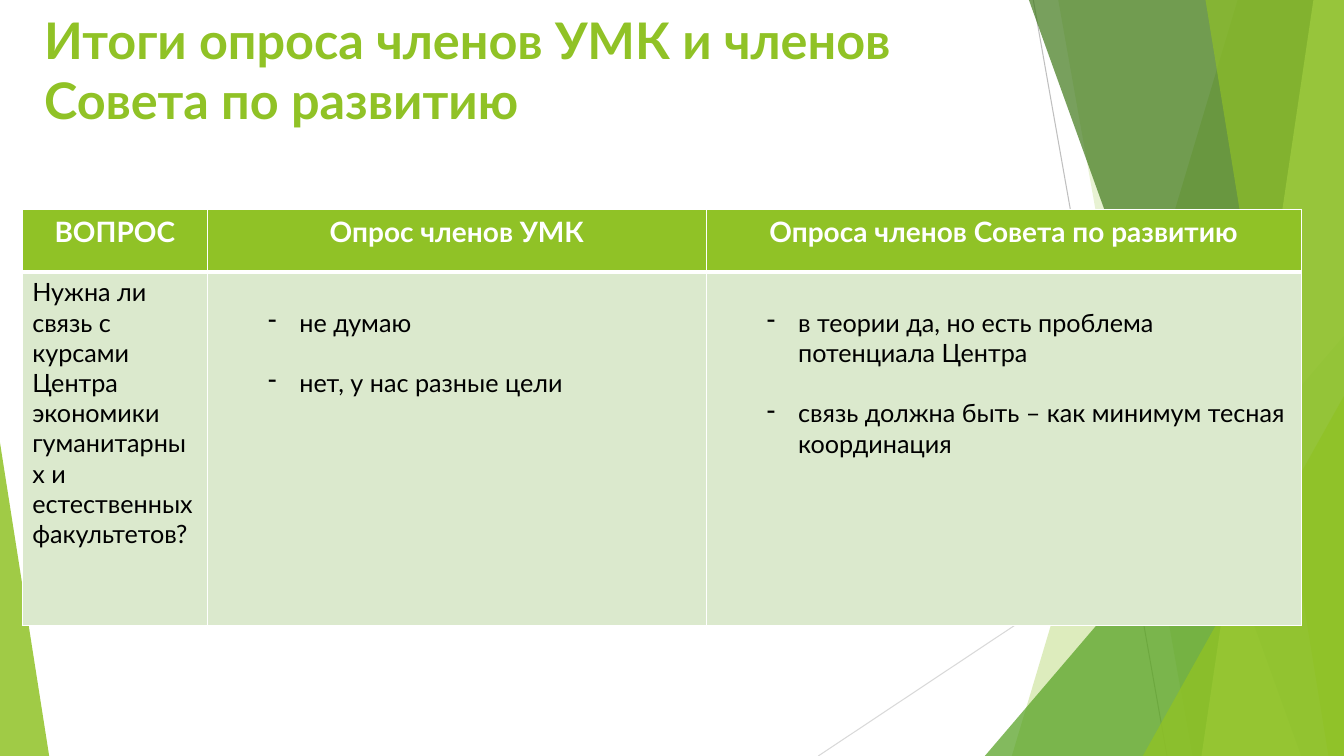
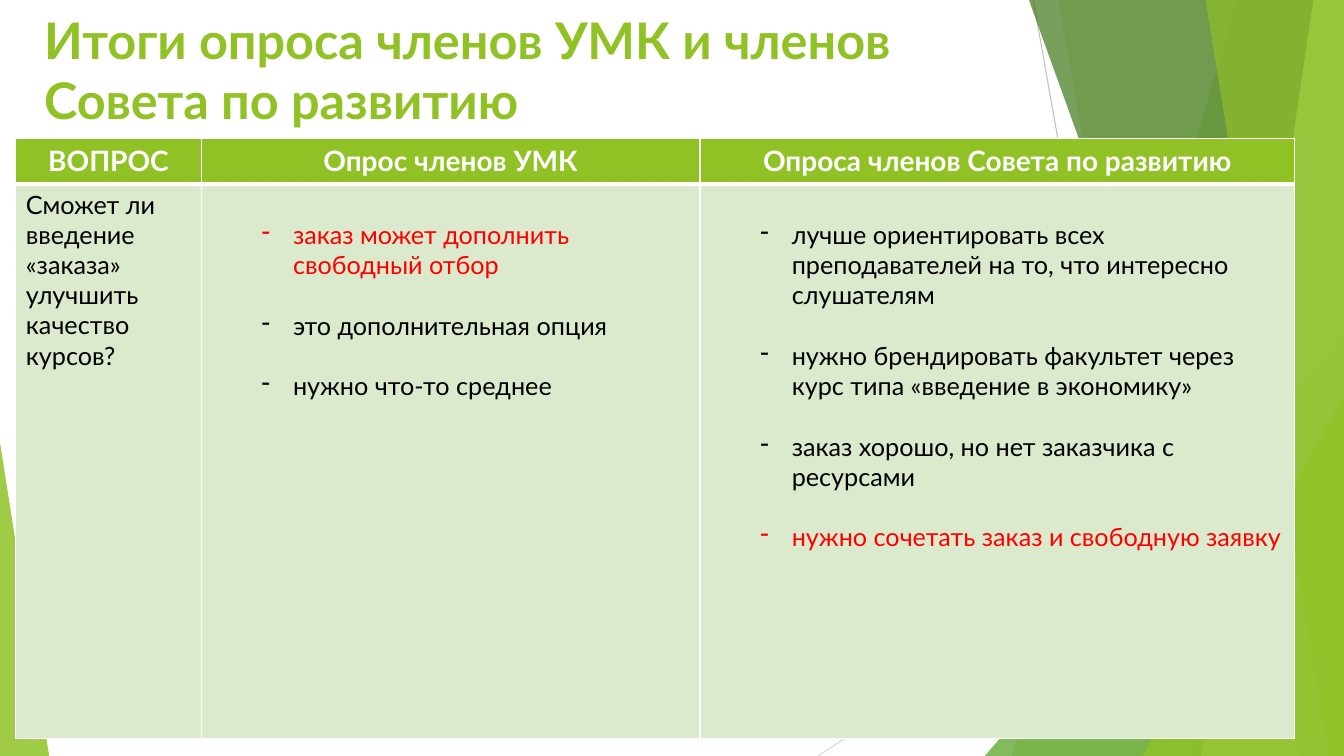
from dataclasses import dataclass

from lxml.etree import SubElement
from pptx import Presentation
from pptx.dml.color import RGBColor
from pptx.enum.shapes import MSO_CONNECTOR, MSO_SHAPE
from pptx.enum.text import MSO_ANCHOR, PP_ALIGN
from pptx.oxml.ns import qn
from pptx.util import Cm, Pt


@dataclass(frozen=True)
class Theme:
    font: str = "Lato"
    green: str = "90C226"
    leaf: str = "54A021"
    forest: str = "3F7819"
    lime: str = "C0E474"
    pale: str = "DBE9CD"
    white: str = "FFFFFF"
    black: str = "000000"
    red: str = "FF0000"
    gray: str = "BFBFBF"
    light_gray: str = "D9D9D9"
    title_size: int = 36
    header_size: int = 20
    body_size: int = 18


theme = Theme()
WIDTH, HEIGHT = 33.87, 19.05
BODY_LINE = Pt(theme.body_size * 1.2)

# Background, from back to front
RAYS = [
    ((26.04, 0), (29.41, HEIGHT), theme.gray),
    ((WIDTH, 10.24), (20.62, HEIGHT), theme.light_gray),
]
# A band runs from (top x, bottom x) to the right edge; a triangle is
# (left, top, width, apex position) and stands on the bottom edge.
PANELS = [
    ("band", (31.19, 25.5), theme.green, 30),
    ("band", (26.67, 30.05), theme.green, 20),
    ("triangle", (24.82, 8.46, 9.05, 1), theme.leaf, 72),
    ("band", (25.93, 32.79), theme.forest, 70),
    ("band", (33.1, 30.28), theme.lime, 70),
    ("band", (30.38, 33.48), theme.green, 65),
    ("triangle", (28.8, 9.98, 5.07, 1), theme.green, 80),
    ("triangle", (0, 11.15, 1.24, 0), theme.green, 85),
]

TITLE = "Итоги опроса членов УМК и членов Совета по развитию"
HEADERS = ["ВОПРОС", "Опрос членов УМК", "Опроса членов Совета по развитию"]
COLUMN_WIDTHS = [4.67, 12.57, 14.99]
BORDER_SIDES = ["lnL", "lnR", "lnT", "lnB"]

# Answers in highlighted are shown in red
SURVEYS = [
    {
        "position": (0.56, 5.28),
        "row_heights": (1.57, 8.92),
        "question": "Нужна ли связь с курсами Центра экономики гуманитарных "
                    "и естественных факультетов?",
        "answers": [
            ["не думаю", "нет, у нас разные цели"],
            ["в теории да, но есть проблема потенциала Центра",
             "связь должна быть – как минимум тесная координация"],
        ],
        "highlighted": [],
    },
    {
        "position": (0.4, 3.5),
        "row_heights": (1.14, 13.97),
        "question": "Сможет ли введение «заказа» улучшить качество курсов?",
        "answers": [
            ["заказ может дополнить свободный отбор",
             "это дополнительная опция",
             "нужно что-то среднее"],
            ["лучше ориентировать всех преподавателей на то, что интересно слушателям",
             "нужно брендировать факультет через курс типа «введение в экономику»",
             "заказ хорошо, но нет заказчика с ресурсами",
             "нужно сочетать заказ и свободную заявку"],
        ],
        "highlighted": ["заказ может дополнить свободный отбор",
                        "нужно сочетать заказ и свободную заявку"],
    },
]


def write_text(paragraph, text, size, color, bold=False):
    paragraph.text = text
    for run in paragraph.runs:
        run.font.name = theme.font
        run.font.size = Pt(size)
        run.font.bold = bold
        run.font.color.rgb = RGBColor.from_string(color)


def add_dash(paragraph):
    """Give the paragraph a hanging dash bullet."""
    properties = paragraph._p.get_or_add_pPr()
    properties.set("marL", str(Cm(2.06)))
    properties.set("indent", str(Cm(-0.79)))
    SubElement(properties, qn("a:buChar"), char="-")


presentation = Presentation()
presentation.slide_width = Cm(WIDTH)
presentation.slide_height = Cm(HEIGHT)
blank_layout = presentation.slide_layouts[6]

for survey in SURVEYS:
    slide = presentation.slides.add_slide(blank_layout)
    shapes = slide.shapes

    for start, end, color in RAYS:
        points = [Cm(value) for value in start + end]
        ray = shapes.add_connector(MSO_CONNECTOR.STRAIGHT, *points)
        ray.line.color.rgb = RGBColor.from_string(color)
        ray.line.width = Pt(0.75)
        SubElement(ray._element.spPr, qn("a:effectLst"))

    for kind, geometry, color, opacity in PANELS:
        if kind == "band":
            top_x, bottom_x = geometry
            builder = shapes.build_freeform(Cm(top_x), 0)
            corners = [(WIDTH, 0), (WIDTH, HEIGHT), (bottom_x, HEIGHT)]
            builder.add_line_segments([(Cm(x), Cm(y)) for x, y in corners])
            panel = builder.convert_to_shape()
        else:
            left, top, width, apex = geometry
            panel = shapes.add_shape(MSO_SHAPE.ISOSCELES_TRIANGLE, Cm(left), Cm(top),
                                     Cm(width), Cm(HEIGHT - top))
            panel.adjustments[0] = apex
        panel.shadow.inherit = False
        panel.line.fill.background()
        panel.fill.solid()
        panel.fill.fore_color.rgb = RGBColor.from_string(color)
        fill_color = panel._element.spPr.find(qn("a:solidFill")).find(qn("a:srgbClr"))
        SubElement(fill_color, qn("a:alpha"), val=str(opacity * 1000))

    title = shapes.add_textbox(Cm(0.86), Cm(0.1), Cm(24.64), Cm(3.66))
    title.text_frame.word_wrap = True
    title.text_frame.vertical_anchor = MSO_ANCHOR.TOP
    write_text(title.text_frame.paragraphs[0], TITLE, theme.title_size, theme.green, True)

    left, top = survey["position"]
    frame = shapes.add_table(2, len(HEADERS), Cm(left), Cm(top),
                             Cm(sum(COLUMN_WIDTHS)), Cm(sum(survey["row_heights"])))
    table = frame.table
    table.horz_banding = False
    for column, width in zip(table.columns, COLUMN_WIDTHS):
        column.width = Cm(width)
    for row, height in zip(table.rows, survey["row_heights"]):
        row.height = Cm(height)

    for row_index, row in enumerate(table.rows):
        thick_side = "lnT" if row_index else "lnB"
        for cell in row.cells:
            properties = cell._tc.get_or_add_tcPr()
            for side in BORDER_SIDES:
                weight = Pt(3) if side == thick_side else Pt(1)
                border = SubElement(properties, qn(f"a:{side}"), w=str(weight))
                border_fill = SubElement(border, qn("a:solidFill"))
                SubElement(border_fill, qn("a:srgbClr"), val=theme.white)
            cell.fill.solid()
            cell.fill.fore_color.rgb = RGBColor.from_string(
                theme.pale if row_index else theme.green)

    for cell, header in zip(table.rows[0].cells, HEADERS):
        paragraph = cell.text_frame.paragraphs[0]
        write_text(paragraph, header, theme.header_size, theme.white, True)
        paragraph.alignment = PP_ALIGN.CENTER

    question = table.cell(1, 0).text_frame.paragraphs[0]
    write_text(question, survey["question"], theme.body_size, theme.black)

    for column_index, answers in enumerate(survey["answers"], start=1):
        cell = table.cell(1, column_index)
        cell.margin_top = Cm(0.13) + BODY_LINE
        for index, answer in enumerate(answers):
            text_frame = cell.text_frame
            paragraph = text_frame.add_paragraph() if index else text_frame.paragraphs[0]
            color = theme.red if answer in survey["highlighted"] else theme.black
            write_text(paragraph, answer, theme.body_size, color)
            if index:
                paragraph.space_before = BODY_LINE
            add_dash(paragraph)

presentation.save("out.pptx")
